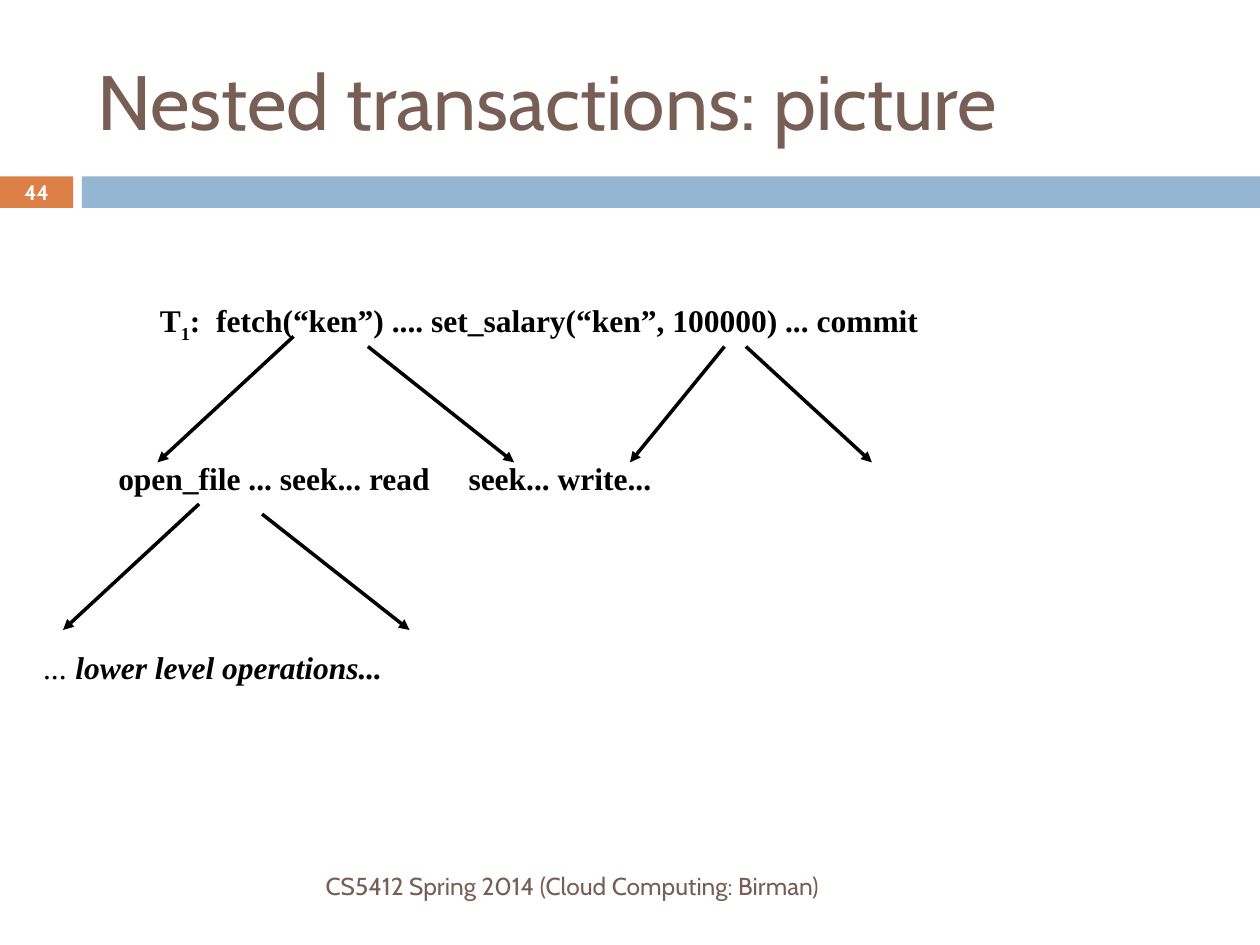
from dataclasses import dataclass

from lxml.etree import SubElement
from pptx import Presentation
from pptx.dml.color import RGBColor
from pptx.enum.shapes import MSO_CONNECTOR, MSO_SHAPE
from pptx.enum.text import MSO_ANCHOR, PP_ALIGN
from pptx.oxml.ns import qn
from pptx.util import Inches, Pt

BLACK = RGBColor(0x00, 0x00, 0x00)
WHITE = RGBColor(0xFF, 0xFF, 0xFF)
BROWN = RGBColor(0x77, 0x5F, 0x55)
ORANGE = RGBColor(0xDD, 0x80, 0x47)
BLUE = RGBColor(0x94, 0xB6, 0xD2)

HEADING = {"name": "Cabin", "size": Pt(44), "color": BROWN}
FOOTER = {"name": "Cabin", "size": Pt(14), "color": BROWN}
NUMBER = {"name": "Cabin", "size": Pt(12), "color": WHITE, "bold": True}
OPERATION = {"name": "Times New Roman", "size": Pt(18), "color": BLACK, "bold": True}
ELLIPSIS = {**OPERATION, "bold": False, "italic": True}
LOWER_LEVEL = {**OPERATION, "italic": True}


@dataclass
class Box:
    left: float
    top: float
    width: float
    height: float

    def lengths(self) -> list:
        return [Inches(n) for n in (self.left, self.top, self.width, self.height)]


@dataclass
class Label:
    box: Box
    runs: list
    alignment: PP_ALIGN = PP_ALIGN.LEFT
    anchor: MSO_ANCHOR = MSO_ANCHOR.TOP


@dataclass
class Arrow:
    start: tuple
    end: tuple


BARS = [(Box(0, 1.4, 0.58, 0.25), ORANGE), (Box(0.65, 1.4, 9.35, 0.25), BLUE)]

TITLE = Label(Box(0.67, 0.25, 8.92, 1.08),
              [("Nested transactions: picture", HEADING)], anchor=MSO_ANCHOR.MIDDLE)
TRANSACTION = Label(Box(1.17, 2.34, 8.41, 0.5), [
    ("T", OPERATION),
    ("1", {**OPERATION, "baseline": -25000}),
    (":  fetch(“ken”) .... set_salary(“ken”, 100000) ... commit", OPERATION),
])
FILE_STEPS = Label(Box(0.84, 3.59, 8.41, 0.5),
                   [("open_file ... seek... read\tseek... write...", OPERATION)])
LOWER_STEPS = Label(Box(0.25, 5.09, 4.58, 0.5),
                    [("... ", ELLIPSIS), ("lower level operations...", LOWER_LEVEL)])
COURSE = Label(Box(0.67, 6.83, 5.93, 0.4),
               [("CS5412 Spring 2014 (Cloud Computing: Birman)", FOOTER)],
               PP_ALIGN.RIGHT, MSO_ANCHOR.MIDDLE)
PAGE = Label(Box(0, 1.39, 0.58, 0.27), [("44", NUMBER)],
             PP_ALIGN.CENTER, MSO_ANCHOR.MIDDLE)

ARROWS = [
    Arrow((2.33, 2.67), (1.25, 3.67)),
    Arrow((2.92, 2.75), (4.08, 3.67)),
    Arrow((5.75, 2.75), (5, 3.67)),
    Arrow((5.92, 2.75), (6.92, 3.67)),
    Arrow((1.58, 4), (0.5, 5)),
    Arrow((2.08, 4.08), (3.25, 5)),
]


def format_run(run, values: dict) -> None:
    for name, value in values.items():
        if name == "color":
            run.font.color.rgb = value
        elif name == "baseline":
            run._r.get_or_add_rPr().set("baseline", str(value))
        else:
            setattr(run.font, name, value)


def write_label(shape, label: Label):
    frame = shape.text_frame
    frame.word_wrap = True
    frame.vertical_anchor = label.anchor
    paragraph = frame.paragraphs[0]
    paragraph.alignment = label.alignment
    for text, values in label.runs:
        run = paragraph.add_run()
        run.text = text
        format_run(run, values)
    return paragraph


def add_label(slide, label: Label):
    return write_label(slide.shapes.add_textbox(*label.box.lengths()), label)


def add_tab_stop(paragraph, position: float) -> None:
    tab_list = SubElement(paragraph._p.get_or_add_pPr(), qn("a:tabLst"))
    SubElement(tab_list, qn("a:tab"), pos=str(Inches(position)), algn="l")


def add_bar(slide, box: Box, color: RGBColor) -> None:
    shape = slide.shapes.add_shape(MSO_SHAPE.RECTANGLE, *box.lengths())
    shape.shadow.inherit = False
    shape.fill.solid()
    shape.fill.fore_color.rgb = color
    shape.line.fill.background()


def add_arrow(slide, arrow: Arrow) -> None:
    ends = [Inches(n) for n in (*arrow.start, *arrow.end)]
    connector = slide.shapes.add_connector(MSO_CONNECTOR.STRAIGHT, *ends)
    connector.line.color.rgb = BLACK
    connector.line.width = Pt(2)
    SubElement(connector.line._get_or_add_ln(), qn("a:tailEnd"), type="triangle")
    SubElement(connector._element.spPr, qn("a:effectLst"))


def main() -> None:
    presentation = Presentation()
    presentation.slide_width = Inches(10)
    presentation.slide_height = Inches(7.5)
    slide = presentation.slides.add_slide(presentation.slide_layouts[5])

    # Header bars and title
    for box, color in BARS:
        add_bar(slide, box, color)
    title = slide.shapes.title
    title.left, title.top, title.width, title.height = TITLE.box.lengths()
    write_label(title, TITLE)

    # Levels of the transaction tree, with a tab between the two step groups
    add_label(slide, TRANSACTION)
    add_tab_stop(add_label(slide, FILE_STEPS), 2.78)
    for arrow in ARROWS:
        add_arrow(slide, arrow)
    add_label(slide, LOWER_STEPS)

    # Footer and slide number
    add_label(slide, COURSE)
    add_label(slide, PAGE)

    presentation.save("out.pptx")


if __name__ == "__main__":
    main()
